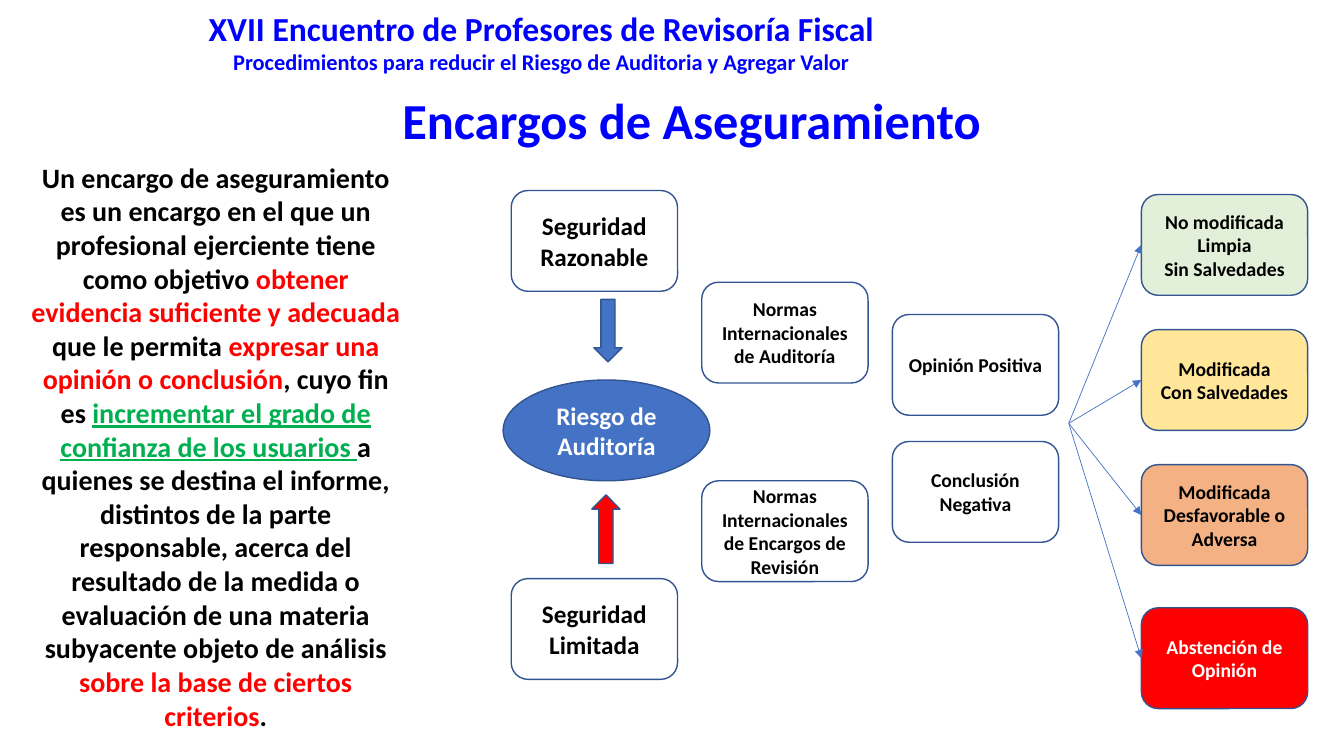
from lxml import etree
from pptx import Presentation
from pptx.dml.color import RGBColor
from pptx.enum.shapes import MSO_CONNECTOR, MSO_SHAPE
from pptx.enum.text import MSO_ANCHOR, MSO_AUTO_SIZE, PP_ALIGN
from pptx.oxml.ns import qn
from pptx.util import Inches, Pt

ROUNDED = MSO_SHAPE.ROUNDED_RECTANGLE
ELLIPSE = MSO_SHAPE.OVAL
DOWN_ARROW = MSO_SHAPE.DOWN_ARROW
STRAIGHT = MSO_CONNECTOR.STRAIGHT
CENTER = PP_ALIGN.CENTER
MIDDLE, TOP = MSO_ANCHOR.MIDDLE, MSO_ANCHOR.TOP
NO_AUTOFIT = MSO_AUTO_SIZE.NONE
LEFT_SIDE = 1

BLACK, WHITE, RED, GREEN = "000000", "FFFFFF", "FF0000", "00B050"
TITLE_BLUE, ACCENT, OUTLINE = "0000FF", "4472C4", "325491"
BOX_SIZE = (1.65, 1)

DEFINITION = [
    ("Un encargo de aseguramiento es un encargo en el que un profesional "
     "ejerciente tiene como objetivo ", BLACK),
    ("obtener evidencia suficiente y adecuada ", RED),
    ("que le permita ", BLACK),
    ("expresar una opinión o conclusión", RED),
    (", cuyo fin es ", BLACK),
    ("incrementar el grado de confianza de los usuarios ", GREEN),
    ("a quienes se destina el informe, distintos de la parte responsable, "
     "acerca del resultado de la medida o evaluación de una materia "
     "subyacente objeto de análisis ", BLACK),
    ("sobre la base de ciertos criterios", RED),
    (".", BLACK),
]

# left, top, lines, text size
PROCESS_BOXES = [
    (5.07, 1.89, ["Seguridad Razonable"], 18),
    (5.07, 5.74, ["Seguridad Limitada"], 18),
    (6.96, 2.8, ["Normas Internacionales de Auditoría"], 14),
    (6.96, 4.77, ["Normas Internacionales de Encargos de Revisión"], 14),
    (8.85, 3.12, ["Opinión Positiva"], 14),
    (8.85, 4.38, ["Conclusión Negativa"], 14),
]

# top, lines, fill, text colour
OPINIONS = [
    (1.93, ["No modificada", "Limpia", "Sin Salvedades"], "E2F0D9", BLACK),
    (3.27, ["Modificada", "Con Salvedades"], "FFE699", BLACK),
    (4.61, ["Modificada", "Desfavorable o Adversa"], "F4B183", BLACK),
    (6.03, ["Abstención de Opinión"], RED, WHITE),
]
OPINION_LEFT = 11.32
OPINION_ORIGIN = (10.6, 4.2)


def rgb(value):
    return RGBColor.from_string(value)


def format_font(font, size, color, **extra):
    values = {"name": "Calibri", "size": Pt(size), "bold": True, **extra}
    for key, value in values.items():
        setattr(font, key, value)
    font.color.rgb = rgb(color)


def write(frame, paragraphs, anchor=TOP):
    """Fill a frame with paragraphs, each a list of (text, size, colour) runs."""
    settings = {"word_wrap": True, "auto_size": NO_AUTOFIT,
                "vertical_anchor": anchor}
    for key, value in settings.items():
        setattr(frame, key, value)
    for index, runs in enumerate(paragraphs):
        paragraph = frame.add_paragraph() if index else frame.paragraphs[0]
        paragraph.alignment = CENTER
        for text, size, color in runs:
            run = paragraph.add_run()
            run.text = text
            format_font(run.font, size, color, underline=color == GREEN)


def add_text(slide, place, paragraphs):
    box = slide.shapes.add_textbox(*map(Inches, place))
    write(box.text_frame, paragraphs)


def set_title(slide, place, text):
    title = slide.shapes.title
    for key, value in zip(("left", "top", "width", "height"), place):
        setattr(title, key, Inches(value))
    write(title.text_frame, [[(text, 36, TITLE_BLUE)]])


def add_figure(slide, kind, place, fill=None, lines=(), size=14, color=BLACK):
    figure = slide.shapes.add_shape(kind, *map(Inches, place))
    figure.shadow.inherit = False
    if fill:
        figure.fill.solid()
        figure.fill.fore_color.rgb = rgb(fill)
    else:
        figure.fill.background()
    figure.line.color.rgb = rgb(OUTLINE)
    figure.line.width = Pt(1)
    if lines:
        write(figure.text_frame, [[(line, size, color)] for line in lines], MIDDLE)
    return figure


def add_arrow_to(slide, start, target):
    """Draw a thin arrow from a point to the left side of a box."""
    x, y = map(Inches, start)
    arrow = slide.shapes.add_connector(STRAIGHT, x, y, x, y)
    arrow.end_connect(target, LEFT_SIDE)
    arrow.line.color.rgb = rgb(ACCENT)
    arrow.line.width = Pt(0.5)
    etree.SubElement(arrow.line._get_or_add_ln(), qn("a:tailEnd"), type="triangle")
    etree.SubElement(arrow._element.spPr, qn("a:effectLst"))


def main():
    deck = Presentation()
    deck.slide_width, deck.slide_height = Inches(13.33), Inches(7.5)
    slide = deck.slides.add_slide(deck.slide_layouts[5])

    add_text(slide, (1.94, 0.03, 6.86, 0.77), [
        [("XVII Encuentro de Profesores de Revisoría Fiscal", 24, TITLE_BLUE)],
        [("Procedimientos para reducir el Riesgo de Auditoria y Agregar Valor",
          16, TITLE_BLUE)],
    ])
    add_text(slide, (0.17, 1.54, 3.94, 5.82),
             [[(text, 20, color) for text, color in DEFINITION]])
    set_title(slide, (3.12, 0.83, 7.48, 0.71), "Encargos de Aseguramiento")

    for left, top, lines, size in PROCESS_BOXES:
        add_figure(slide, ROUNDED, (left, top, *BOX_SIZE), None, lines, size)

    opinion_boxes = [
        add_figure(slide, ROUNDED, (OPINION_LEFT, top, *BOX_SIZE), fill, lines,
                   color=color)
        for top, lines, fill, color in OPINIONS
    ]

    add_figure(slide, ELLIPSE, (4.99, 3.77, 2.05, 1), ACCENT,
               ["Riesgo de Auditoría"], 18, WHITE)
    add_figure(slide, DOWN_ARROW, (5.89, 2.97, 0.28, 0.62), ACCENT)
    limited_arrow = add_figure(slide, DOWN_ARROW, (5.87, 4.91, 0.28, 0.68), RED)
    limited_arrow.rotation = 180

    for box in opinion_boxes:
        add_arrow_to(slide, OPINION_ORIGIN, box)

    deck.save("out.pptx")


if __name__ == "__main__":
    main()
